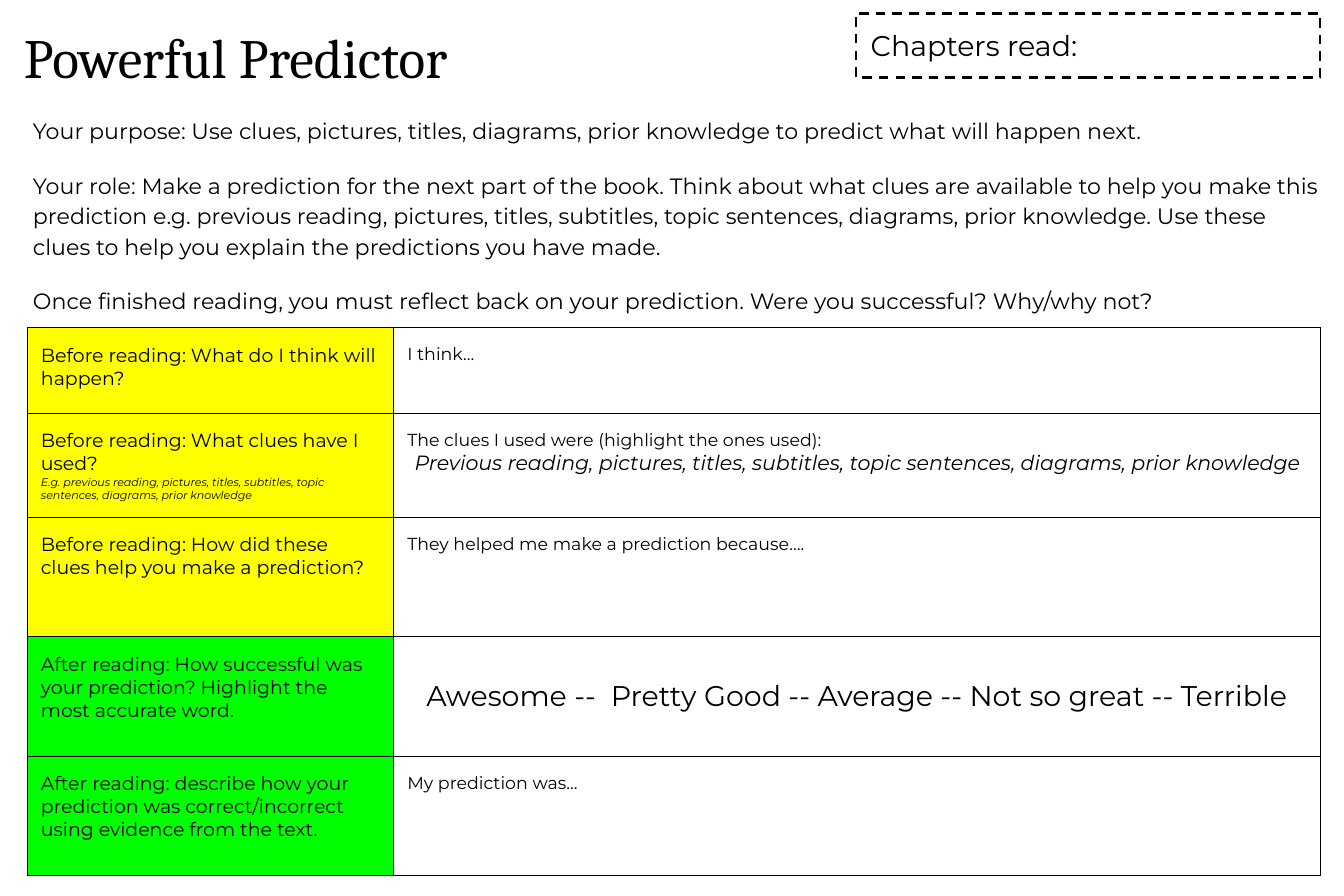
from dataclasses import dataclass

from lxml.etree import SubElement
from pptx import Presentation
from pptx.dml.color import RGBColor
from pptx.enum.dml import MSO_LINE
from pptx.enum.shapes import MSO_SHAPE
from pptx.enum.text import MSO_ANCHOR, PP_ALIGN
from pptx.oxml.ns import qn
from pptx.util import Pt

EMU_PER_PX = 9144  # 100 px to the inch


@dataclass(frozen=True)
class Theme:
    ink: str = "000000"
    before: str = "FFFF00"
    after: str = "00FF00"
    heading_font: str = "Cambria"
    body_font: str = "Montserrat"
    title: int = 35
    large: int = 18
    body: int = 14
    clues: int = 13
    question: int = 12
    answer: int = 11
    hint: int = 7


THEME = Theme()


@dataclass(frozen=True)
class Line:
    text: str
    size: int
    italic: bool = False
    align: PP_ALIGN = PP_ALIGN.LEFT


PURPOSE = [
    "Your purpose: Use clues, pictures, titles, diagrams, prior knowledge to predict "
    "what will happen next.",
    "Your role: Make a prediction for the next part of the book. Think about what clues "
    "are available to help you make this prediction e.g. previous reading, pictures, "
    "titles, subtitles, topic sentences, diagrams, prior knowledge. Use these clues to "
    "help you explain the predictions you have made.",
    "Once finished reading, you must reflect back on your prediction. Were you "
    "successful? Why/why not?",
]
CLUES = ("revious reading, pictures, titles, subtitles, topic sentences, diagrams, "
         "prior knowledge")


def question(text):
    return Line(text, THEME.question)


def answer(text):
    return Line(text, THEME.answer)


# Row height, question colour, question lines, answer lines, answer anchor
ROWS = [
    (75, THEME.before, [question("Before reading: What do I think will happen?")],
     [answer("I think…")], MSO_ANCHOR.TOP),
    (91, THEME.before,
     [question("Before reading: What clues have I used?"),
      Line("E.g. p" + CLUES, THEME.hint, italic=True)],
     [answer("The clues I used were (highlight the ones used):"),
      Line("P" + CLUES, THEME.clues, italic=True, align=PP_ALIGN.CENTER)],
     MSO_ANCHOR.TOP),
    (105, THEME.before,
     [question("Before reading: How did these clues help you make a prediction?")],
     [answer("They helped me make a prediction because….")], MSO_ANCHOR.TOP),
    (105, THEME.after,
     [question("After reading: How successful was your prediction? "
               "Highlight the most accurate word.")],
     [Line("Awesome --  Pretty Good -- Average -- Not so great -- Terrible",
           THEME.large, align=PP_ALIGN.CENTER)], MSO_ANCHOR.MIDDLE),
    (105, THEME.after,
     [question("After reading: describe how your prediction was correct/incorrect "
               "using evidence from the text.")],
     [answer("My prediction was…")], MSO_ANCHOR.TOP),
]


def px(*lengths):
    return [length * EMU_PER_PX for length in lengths]


def set_margins(holder, across, down):
    holder.margin_left = holder.margin_right = across * EMU_PER_PX
    holder.margin_top = holder.margin_bottom = down * EMU_PER_PX


def write_lines(frame, lines, font=THEME.body_font):
    frame.word_wrap = True
    frame.text = "\n".join(line.text for line in lines)
    for para, line in zip(frame.paragraphs, lines):
        para.alignment = line.align
        for span in para.runs:
            span.font.name = font
            span.font.size = Pt(line.size)
            span.font.italic = line.italic
            span.font.color.rgb = RGBColor.from_string(THEME.ink)


def add_text(page, place, lines, font=THEME.body_font):
    box = page.shapes.add_textbox(*px(*place))
    set_margins(box.text_frame, 13, 13)
    write_lines(box.text_frame, lines, font)
    return box


def add_purpose(page, place):
    box = add_text(page, place, [Line(text, THEME.body) for text in PURPOSE])
    for index, para in enumerate(box.text_frame.paragraphs):
        para.line_spacing = 1.15
        para.space_before = Pt(15 if index else 0)


def add_dashed_box(page, place, line):
    box = page.shapes.add_shape(MSO_SHAPE.RECTANGLE, *px(*place))
    box.shadow.inherit = False
    box.fill.background()
    box.line.color.rgb = RGBColor.from_string(THEME.ink)
    box.line.width = Pt(1.5)
    box.line.dash_style = MSO_LINE.DASH
    set_margins(box.text_frame, 13, 13)
    box.text_frame.vertical_anchor = MSO_ANCHOR.TOP
    write_lines(box.text_frame, [line])


def add_borders(cell):
    properties = cell._tc.get_or_add_tcPr()
    for side in ("lnL", "lnR", "lnT", "lnB"):
        border = SubElement(properties, qn("a:" + side), w=str(Pt(0.75)))
        fill = SubElement(border, qn("a:solidFill"))
        SubElement(fill, qn("a:srgbClr"), val=THEME.ink)


def fill_cell(cell, lines, colour=None, anchor=MSO_ANCHOR.TOP):
    add_borders(cell)
    if colour:
        cell.fill.solid()
        cell.fill.fore_color.rgb = RGBColor.from_string(colour)
    else:
        cell.fill.background()
    set_margins(cell, 12, 14)
    cell.vertical_anchor = anchor
    write_lines(cell.text_frame, lines)


def add_prediction_table(page, left, top, widths):
    heights = [row[0] for row in ROWS]
    place = px(left, top, sum(widths), sum(heights))
    table = page.shapes.add_table(len(ROWS), len(widths), *place).table
    table.first_row = table.horz_banding = False
    for column, width in zip(table.columns, px(*widths)):
        column.width = width
    for index, (height, colour, questions, answers, anchor) in enumerate(ROWS):
        table.rows[index].height = height * EMU_PER_PX
        fill_cell(table.cell(index, 0), questions, colour)
        fill_cell(table.cell(index, 1), answers, anchor=anchor)


def main():
    deck = Presentation()
    deck.slide_width, deck.slide_height = px(1181, 787)
    page = deck.slides.add_slide(deck.slide_layouts[6])
    add_text(page, (8, 7, 1101, 88), [Line("Powerful Predictor", THEME.title)],
             THEME.heading_font)
    add_purpose(page, (16, 87, 1159, 206))
    add_dashed_box(page, (752, 12, 408, 56), Line("Chapters read:", THEME.large))
    add_prediction_table(page, 24, 288, (322, 814))
    deck.save("out.pptx")


if __name__ == "__main__":
    main()
